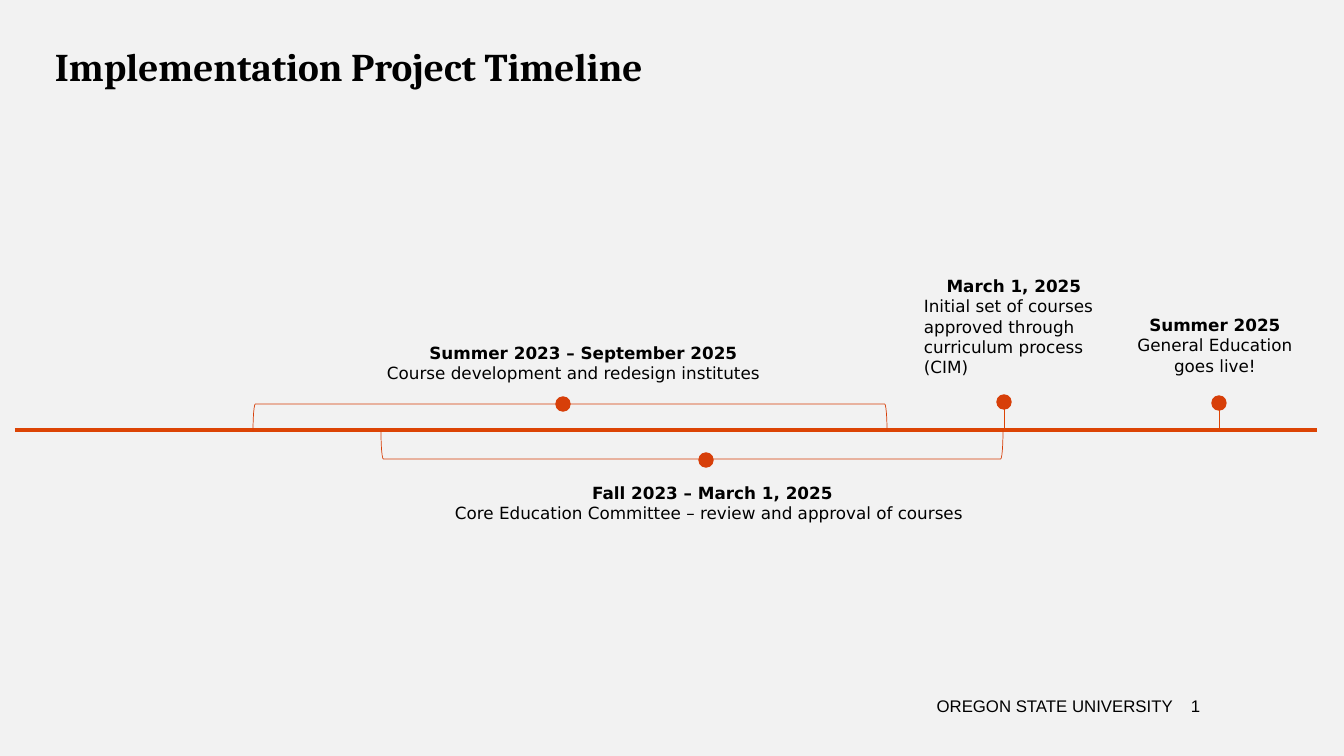
"""Build the implementation project timeline slide."""
from lxml import etree
from pptx import Presentation
from pptx import util as u
from pptx.dml.color import RGBColor
from pptx.enum import shapes, text
from pptx.oxml.ns import qn

L, C, R = text.PP_ALIGN.LEFT, text.PP_ALIGN.CENTER, text.PP_ALIGN.RIGHT
TOP, MIDDLE = text.MSO_ANCHOR.TOP, text.MSO_ANCHOR.MIDDLE

SLIDE = (1344, 756)
TITLE = ("Implementation Project Timeline", (45, 37, 1216, 57))
FOOTERS = [
    ("OREGON STATE UNIVERSITY", (446, 686, 737, 40), R),
    ("1", (1181, 686, 70, 40), L),
]
EVENTS = [
    ("Summer 2023 – September 2025", "Course development and redesign institutes",
     (377, 338, 413, 50), L),
    ("Fall 2023 – March 1, 2025", "Core Education Committee – review and approval of courses",
     (445, 478, 535, 50), L),
    ("March 1, 2025", "Initial set of courses approved through curriculum process (CIM)",
     (914, 271, 200, 112), L),
    ("Summer 2025", "General Education goes live!", (1115, 310, 200, 72), C),
]
AXIS = (15, 430, 1317, 430)
STEMS = [(1004, 431, 1004, 403), (1219, 431, 1219, 403)]
SPANS = [(253, 404, 634, 90), (381, 431, 622, 270)]
SPAN_DEPTH = 28
DOTS = [(1004, 402), (1219, 403), (706, 460), (563, 404)]
DOT = 14

THEME = {
    "background": "F2F2F2", "text": "000000", "axis": "DC4405", "accent": "D73F09",
    "title_font": "Cambria", "body_font": "DejaVu Sans", "footer_font": "Arial",
    "title_size": 28, "body_size": 12,
    "axis_width": 3, "thin_width": 0.5, "dot_width": 1,
}


def px(*values):
    return [round(v * u.Inches(1) / 100.8) for v in values]


def rgb(name):
    return RGBColor.from_string(THEME[name])


def add_text(s, box, lines, font, size, anchor=TOP):
    tf = s.shapes.add_textbox(*px(*box)).text_frame
    tf.word_wrap = True
    tf.vertical_anchor = anchor
    for i, (words, align, bold) in enumerate(lines):
        p = tf.add_paragraph() if i else tf.paragraphs[0]
        p.text = words
        p.alignment = align
        p.font.name = THEME[font]
        p.font.size = u.Pt(THEME[size])
        p.font.bold = bold
        p.font.color.rgb = rgb("text")


def add_line(s, ends, width):
    line = s.shapes.add_connector(shapes.MSO_CONNECTOR.STRAIGHT, *px(*ends))
    line.line.color.rgb = rgb("axis")
    line.line.width = u.Pt(THEME[width])
    etree.SubElement(line._element.spPr, qn("a:effectLst"))


def add_accent(s, kind, box, width):
    sp = s.shapes.add_shape(kind, *px(*box))
    sp.shadow.inherit = False
    sp.line.color.rgb = rgb("accent")
    sp.line.width = u.Pt(THEME[width])
    return sp


def add_span(s, left, top, length, turn):
    box = (left + (length - SPAN_DEPTH) / 2, top + (SPAN_DEPTH - length) / 2,
           SPAN_DEPTH, length)
    sp = add_accent(s, shapes.MSO_SHAPE.LEFT_BRACKET, box, "thin_width")
    sp.fill.background()
    sp.rotation = turn


def add_dot(s, x, y):
    box = (x - DOT / 2, y - DOT / 2, DOT, DOT)
    sp = add_accent(s, shapes.MSO_SHAPE.OVAL, box, "dot_width")
    sp.fill.solid()
    sp.fill.fore_color.rgb = rgb("accent")


def main():
    prs = Presentation()
    prs.slide_width, prs.slide_height = px(*SLIDE)
    s = prs.slides.add_slide(prs.slide_layouts[6])
    s.background.fill.solid()
    s.background.fill.fore_color.rgb = rgb("background")

    for words, box, align in FOOTERS:
        add_text(s, box, [(words, align, False)], "footer_font", "body_size", MIDDLE)
    add_line(s, AXIS, "axis_width")
    for stem in STEMS:
        add_line(s, stem, "thin_width")
    for span in SPANS:
        add_span(s, *span)
    for date, detail, box, align in EVENTS:
        add_text(s, box, [(date, C, True), (detail, align, False)], "body_font", "body_size")
    for dot in DOTS:
        add_dot(s, *dot)
    words, box = TITLE
    add_text(s, box, [(words, L, True)], "title_font", "title_size")
    prs.save("out.pptx")


if __name__ == "__main__":
    main()
